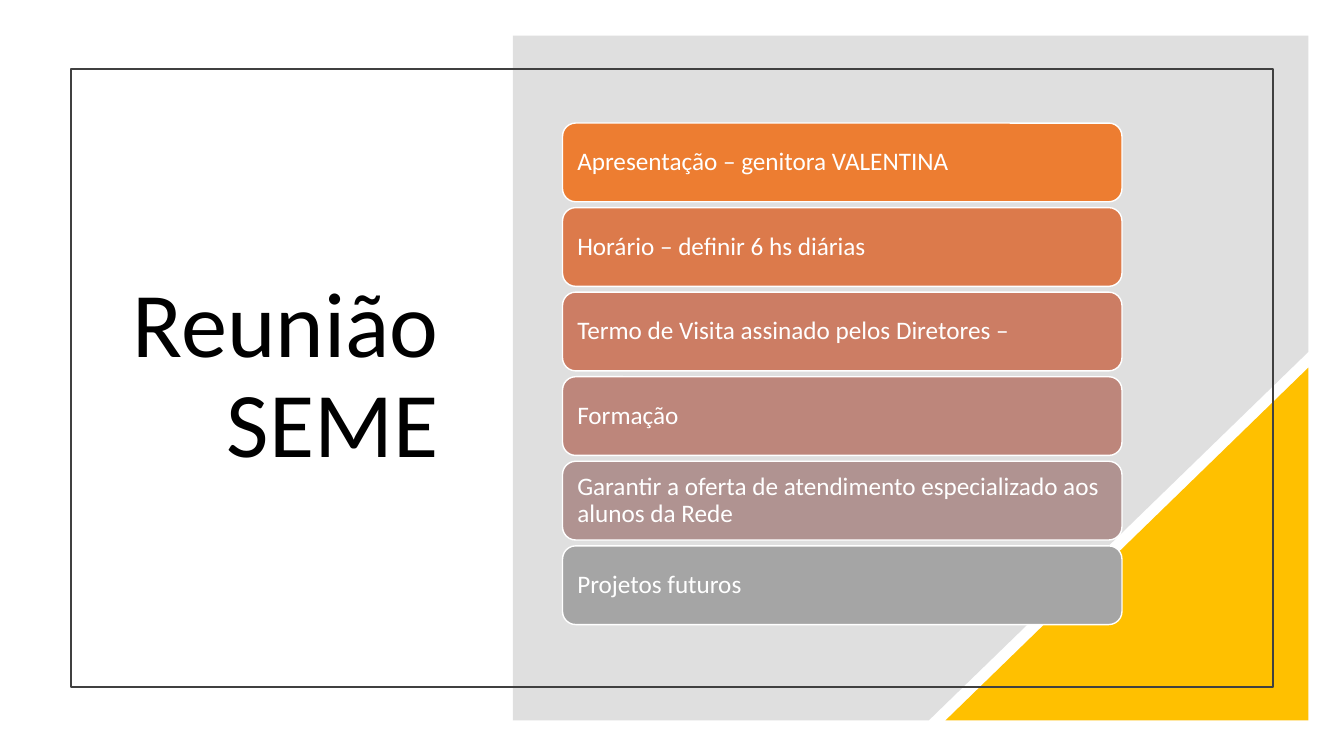
from pptx import Presentation
from pptx.dml.color import RGBColor
from pptx.enum.shapes import MSO_SHAPE
from pptx.enum.text import MSO_ANCHOR, PP_ALIGN
from pptx.oxml.ns import qn
from pptx.util import Pt
from lxml.etree import SubElement


def color(value):
    return RGBColor.from_string(value)


def write(shape, text, size=18, ink="FFFFFF", align=PP_ALIGN.LEFT, font="Calibri",
          inset_x=7.2, inset_y=3.6):
    frame = shape.text_frame
    frame.word_wrap = True
    frame.vertical_anchor = MSO_ANCHOR.MIDDLE
    frame.margin_left = frame.margin_right = Pt(inset_x)
    frame.margin_top = frame.margin_bottom = Pt(inset_y)
    para = frame.paragraphs[0]
    para.alignment = align
    para.line_spacing = 0.9
    span = para.add_run()
    span.text = text
    span.font.name = font
    span.font.size = Pt(size)
    span.font.color.rgb = color(ink)


class Page:
    def __init__(self, slide):
        self.shapes = slide.shapes

    def paint(self, shape, fill=None, line=None, weight=1, alpha=None):
        shape.shadow.inherit = False
        if fill:
            shape.fill.solid()
            shape.fill.fore_color.rgb = color(fill)
        else:
            shape.fill.background()
        if alpha:
            tint = shape.element.spPr.find(qn("a:solidFill"))[0]
            SubElement(tint, qn("a:alpha")).set("val", str(alpha * 1000))
        if line:
            shape.line.color.rgb = color(line)
            shape.line.width = Pt(weight)
        else:
            shape.line.fill.background()
        return shape

    def box(self, kind, left, top, width, height, **style):
        shape = self.shapes.add_shape(kind, Pt(left), Pt(top), Pt(width), Pt(height))
        return self.paint(shape, **style)

    def outline(self, points, **style):
        corners = [(Pt(x), Pt(y)) for x, y in points]
        builder = self.shapes.build_freeform(*corners[0], scale=1.0)
        builder.add_line_segments(corners[1:], close=True)
        return self.paint(builder.convert_to_shape(), **style)

    def label(self, text, left, top, width, height, **style):
        shape = self.shapes.add_textbox(Pt(left), Pt(top), Pt(width), Pt(height))
        write(shape, text, **style)


TOPICS = [
    ("Apresentação – genitora VALENTINA", "ED7D31"),
    ("Horário – definir 6 hs diárias", "DC7A4B"),
    ("Termo de Visita assinado pelos Diretores –", "CC7D64"),
    ("Formação", "BD867B"),
    ("Garantir a oferta de atendimento especializado aos alunos da Rede", "B09391"),
    ("Projetos futuros", "A5A5A5"),
]
FIRST_TOP = 87.9
TOPIC_STEP = 60.4


def main():
    deck = Presentation()
    deck.slide_width, deck.slide_height = Pt(960), Pt(540)
    page = Page(deck.slides.add_slide(deck.slide_layouts[6]))

    page.label("Reunião SEME", 79.2, 93.6, 241.2, 352.8,
               size=66, ink="000000", align=PP_ALIGN.RIGHT)
    page.outline([(366.4, 25.4), (934.6, 25.4), (934.6, 251.3), (663.4, 514.6), (366.4, 514.6)],
                 fill="808080", alpha=25)
    corner = page.box(MSO_SHAPE.RIGHT_TRIANGLE, 675.4, 262.6, 259.2, 252, fill="FFC000")
    corner.element.spPr.find(qn("a:xfrm")).set("flipH", "1")
    page.box(MSO_SHAPE.RECTANGLE, 50.6, 49.2, 859, 441.4, line="404040", weight=1.5)

    for index, (text, fill) in enumerate(TOPICS):
        topic = page.box(MSO_SHAPE.ROUNDED_RECTANGLE, 401.8, FIRST_TOP + index * TOPIC_STEP,
                         399.6, 56.2, fill=fill, line="FFFFFF")
        write(topic, text, inset_x=7.8, inset_y=7.8)

    deck.save("out.pptx")


if __name__ == "__main__":
    main()
